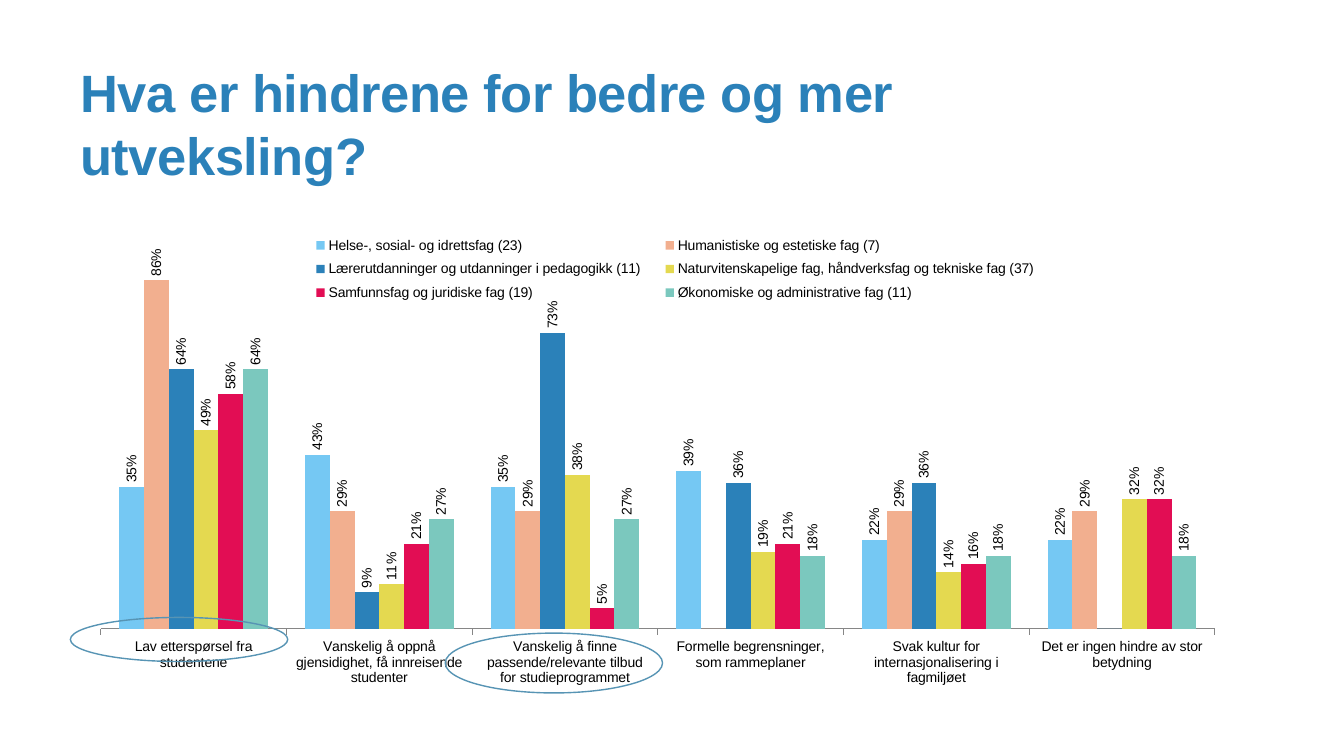
from lxml.etree import SubElement
from pptx import Presentation
from pptx.chart.data import CategoryChartData as Data
from pptx.dml.color import RGBColor as Rgb
from pptx.enum.chart import XL_CHART_TYPE as Kind, XL_LABEL_POSITION as Spot
from pptx.enum.chart import XL_LEGEND_POSITION as Side, XL_TICK_MARK as Tick
from pptx.enum.shapes import MSO_SHAPE as Form
from pptx.enum.text import MSO_ANCHOR as Anchor, MSO_AUTO_SIZE as Fit, PP_ALIGN as Align
from pptx.oxml.ns import qn
from pptx.util import Pt

PX = 9525
HUES = {"sky": "75C8F3", "peach": "F2AF8F", "blue": "2B81B9", "gold": "E4D950",
        "red": "E20D54", "mint": "7BC8BE", "ring": "5794B4", "axis": "868686",
        "ink": "000000"}
CAUSES = ["Lav etterspørsel fra studentene",
          "Vanskelig å oppnå gjensidighet, få innreisende studenter",
          "Vanskelig å finne passende/relevante tilbud for studieprogrammet",
          "Formelle begrensninger, som rammeplaner",
          "Svak kultur for internasjonalisering i fagmiljøet",
          "Det er ingen hindre av stor betydning"]
FIELDS = [
    ("Helse-, sosial- og idrettsfag (23)", "sky", (35, 43, 35, 39, 22, 22)),
    ("Humanistiske og estetiske fag (7)", "peach", (86, 29, 29, 0, 29, 29)),
    ("Lærerutdanninger og utdanninger i pedagogikk (11)", "blue", (64, 9, 73, 36, 36, 0)),
    ("Naturvitenskapelige fag, håndverksfag og tekniske fag (37)", "gold",
     (49, 11, 38, 19, 14, 32)),
    ("Samfunnsfag og juridiske fag (19)", "red", (58, 21, 5, 21, 16, 32)),
    ("Økonomiske og administrative fag (11)", "mint", (64, 27, 27, 18, 18, 18)),
]


def hue(name):
    return Rgb.from_string(HUES[name])


def style(font, size=10, tone="ink", bold=False):
    font.name, font.size, font.bold = "Arial", Pt(size), bold
    font.color.rgb = hue(tone)


def write(frame, text, align=Align.LEFT, lead=None, track=0, **look):
    para = frame.paragraphs[0]
    para.alignment, para.line_spacing = align, lead
    run = para.add_run()
    run.text = text
    style(run.font, **look)
    run.font._element.set("spc", str(track))


def place(node, index, box, inner=False):
    for old in node.findall(qn("c:layout")):
        node.remove(old)
    layout = SubElement(node, qn("c:layout"))
    node.insert(index, layout)
    manual = SubElement(layout, qn("c:manualLayout"))
    parts = [("layoutTarget", "inner")] if inner else []
    parts += [("xMode", "edge"), ("yMode", "edge")] + list(zip("xywh", box))
    for tag, val in parts:
        SubElement(manual, qn("c:" + tag)).set("val", str(val))


class Deck:
    def __init__(self, wide, high):
        self.show = Presentation()
        self.show.slide_width, self.show.slide_height = wide * PX, high * PX
        self.page = self.show.slides.add_slide(self.show.slide_layouts[5])

    def title(self, text, *box):
        head = self.page.shapes.title
        head.left, head.top, head.width, head.height = (n * PX for n in box)
        frame = head.text_frame
        frame.word_wrap, frame.auto_size = True, Fit.SHAPE_TO_FIT_TEXT
        frame.vertical_anchor = Anchor.MIDDLE
        write(frame, text, lead=Pt(45), track=-40, size=37.5, tone="blue", bold=True)

    def chart(self, *box):
        data = Data(number_format="0%")
        data.categories = CAUSES
        for name, _, rates in FIELDS:
            data.add_series(name, [rate / 100 for rate in rates])
        chart = self.page.shapes.add_chart(
            Kind.COLUMN_CLUSTERED, *(n * PX for n in box), data).chart
        style(chart.font)
        chart.has_title = False
        self.axes(chart)
        self.bars(chart.plots[0])
        self.legend(chart)
        area = chart._chartSpace.chart.plotArea
        place(area, 0, (0.01, 0, 0.97, 0.67), inner=True)

    def axes(self, chart):
        scale, base = chart.value_axis, chart.category_axis
        scale.visible = scale.has_major_gridlines = False
        scale.minimum_scale, scale.maximum_scale = 0, 1
        base.major_tick_mark, base.minor_tick_mark = Tick.OUTSIDE, Tick.NONE
        base.format.line.color.rgb = hue("axis")
        base.format.line.width = Pt(0.75)
        style(base.tick_labels.font)

    def bars(self, plot):
        plot.gap_width, plot.overlap, plot.vary_by_categories = 150, 0, False
        for series, (_, tone, _) in zip(plot.series, FIELDS):
            series.format.fill.solid()
            series.format.fill.fore_color.rgb = hue(tone)
            series.invert_if_negative = False
            labels = series.data_labels
            labels.show_value, labels.position = True, Spot.OUTSIDE_END
            labels.number_format, labels.number_format_is_linked = "0%;;", False
            style(labels.font)
            turn = labels._element.find(".//" + qn("a:bodyPr"))
            turn.set("rot", "-5400000")
            turn.set("vert", "horz")

    def legend(self, chart):
        chart.has_legend = True
        key = chart.legend
        key.position, key.include_in_layout = Side.TOP, True
        style(key.font)
        place(key._element, 1, (0.18, 0.01, 0.66, 0.13))

    def ring(self, *box):
        oval = self.page.shapes.add_shape(Form.OVAL, *(n * PX for n in box))
        oval.shadow.inherit = False
        oval.fill.background()
        oval.line.color.rgb, oval.line.width = hue("ring"), Pt(1)


def main():
    deck = Deck(1280, 720)
    deck.title("Hva er hindrene for bedre og mer utveksling?", 67, 52, 806, 131)
    deck.chart(85, 213, 1094, 576)
    deck.ring(67, 588, 207, 42)
    deck.ring(424, 603, 207, 57)
    deck.show.save("out.pptx")


if __name__ == "__main__":
    main()
